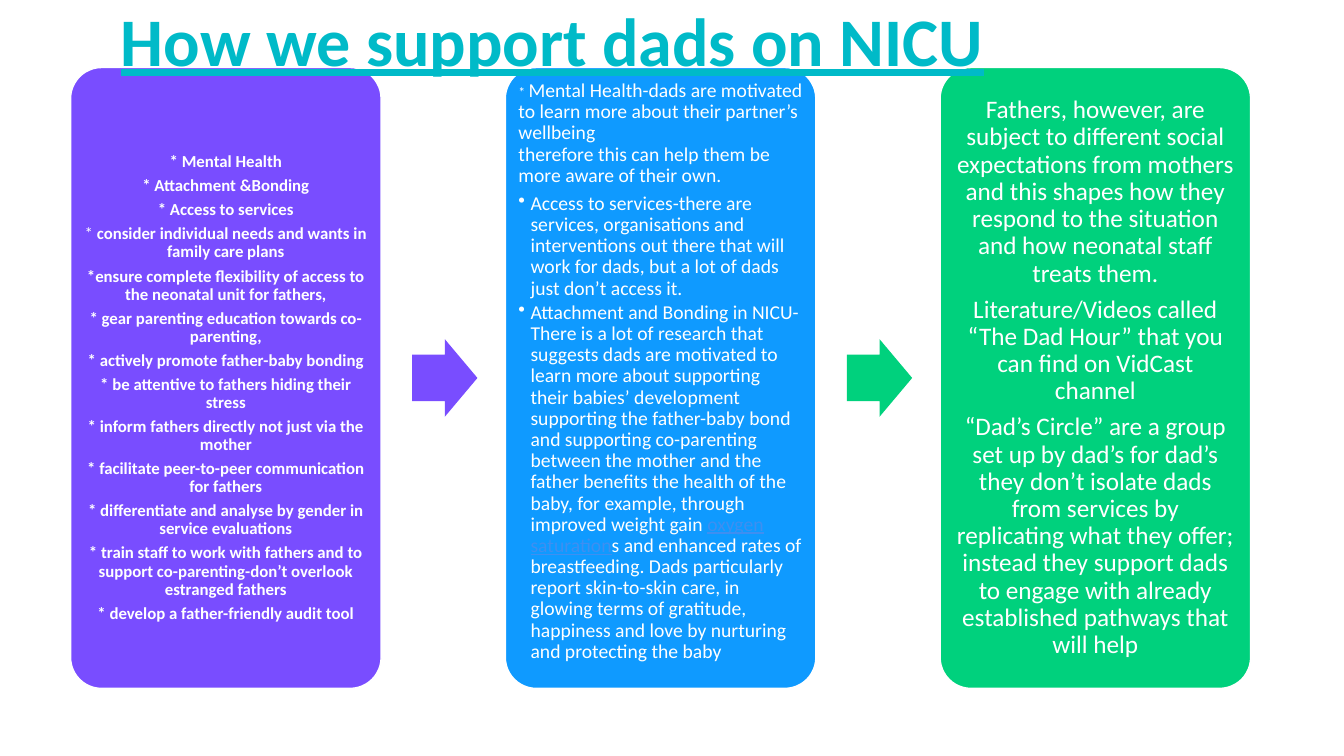
from dataclasses import dataclass

from lxml import etree
from pptx import Presentation
from pptx.dml.color import RGBColor
from pptx.enum.shapes import MSO_SHAPE
from pptx.enum.text import MSO_ANCHOR, PP_ALIGN
from pptx.oxml.ns import qn
from pptx.util import Inches, Pt

ROUNDED = MSO_SHAPE.ROUNDED_RECTANGLE
ARROW = MSO_SHAPE.RIGHT_ARROW
TOP, MIDDLE, BOTTOM = MSO_ANCHOR.TOP, MSO_ANCHOR.MIDDLE, MSO_ANCHOR.BOTTOM
LEFT, CENTER = PP_ALIGN.LEFT, PP_ALIGN.CENTER

WHITE = RGBColor(0xFF, 0xFF, 0xFF)
PURPLE = RGBColor(0x79, 0x4D, 0xFF)
BLUE = RGBColor(0x0F, 0x9A, 0xFF)
GREEN = RGBColor(0x00, 0xD1, 0x7D)
TEAL = RGBColor(0x00, 0xBA, 0xC8)
LINK = RGBColor(0x3E, 0x8F, 0xF1)

FONT = "Calibri"
COLUMN = Inches(3.08)
PITCH = 1.4
GRID_LEFT, GRID_TOP = Inches(0.7), Inches(0.67)
PANEL_ROWS = 2
ARROW_OFFSET, ARROW_WIDTH, ARROW_HEIGHT = 1.1, 0.21, 0.25
BULLET_INDENT = Inches(0.12)


@dataclass
class Span:
    text: str
    size: float | None = None
    bold: bool | None = None
    link: bool = False


@dataclass
class Item:
    spans: list[Span]
    bullet: bool = False


@dataclass
class Panel:
    color: RGBColor
    items: list[Item]
    size: float
    inset: float
    top_inset: float
    bold: bool = False
    anchor: MSO_ANCHOR = MIDDLE
    align: PP_ALIGN = CENTER


def plain(*texts: str) -> list[Item]:
    return [Item([Span(text)]) for text in texts]


SUPPORT_LIST = plain(
    "* Mental Health",
    "* Attachment &Bonding",
    "* Access to services",
) + [
    Item([Span("* ", bold=False), Span("consider individual needs and wants in family care plans")]),
] + plain(
    "*ensure complete flexibility of access to the neonatal unit for fathers,",
    "* gear parenting education towards co-parenting,",
    "* actively promote father-baby bonding",
    "* be attentive to fathers hiding their stress",
    "* inform fathers directly not just via the mother",
    "* facilitate peer-to-peer communication for fathers",
    "* differentiate and analyse by gender in service evaluations",
    "* train staff to work with fathers and to support co-parenting-don’t overlook estranged fathers",
    "* develop a father-friendly audit tool",
)

REASONS = [
    Item([
        Span("* ", size=10),
        Span("Mental Health-dads are motivated to learn more about their partner’s wellbeing\v"
             "therefore this can help them be more aware of their own."),
    ]),
    Item([Span("Access to services-there are services, organisations and interventions out there "
               "that will work for dads, but a lot of dads just don’t access it.")], bullet=True),
    Item([
        Span("Attachment and Bonding in NICU-There is a lot of research that suggests dads are "
             "motivated to learn more about supporting their babies’ development supporting the "
             "father-baby bond and supporting co-parenting between the mother and the father "
             "benefits the health of the baby, for example, through improved weight gain "),
        Span("oxygen saturation", link=True),
        Span("s and enhanced rates of breastfeeding. Dads particularly report skin-to-skin care, "
             "in glowing terms of gratitude, happiness and love by nurturing and protecting the baby"),
    ], bullet=True),
]

RESOURCES = plain(
    "Fathers, however, are subject to different social expectations from mothers and this shapes "
    "how they respond to the situation and how neonatal staff treats them.",
    "Literature/Videos called “The Dad Hour” that you can find on VidCast\vchannel",
    "“Dad’s Circle” are a group set up by dad’s for dad’s they don’t isolate dads from services by "
    "replicating what they offer; instead they support dads to engage with already established "
    "pathways that will help",
)

PANELS = [
    Panel(PURPLE, SUPPORT_LIST, 12, 0.04, 0.24, bold=True),
    Panel(BLUE, REASONS, 14, 0.04, 0.04, anchor=TOP, align=LEFT),
    Panel(GREEN, RESOURCES, 18, 0.07, 0.07),
]


def add_bullet(paragraph) -> None:
    paragraph.level = 1
    properties = paragraph._p.get_or_add_pPr()
    properties.set("marL", str(BULLET_INDENT))
    properties.set("indent", str(-BULLET_INDENT))
    etree.SubElement(properties, qn("a:buChar")).set("char", "•")


def add_span(paragraph, span: Span) -> None:
    for index, line in enumerate(span.text.split("\v")):
        if index:
            paragraph.add_line_break()
        run = paragraph.add_run()
        run.text = line
        if span.size:
            run.font.size = Pt(span.size)
        if span.bold is not None:
            run.font.bold = span.bold
        if span.link:
            run.font.color.rgb = LINK
            run.font.underline = True


def fill_text(frame, panel: Panel) -> None:
    frame.word_wrap = True
    frame.vertical_anchor = panel.anchor
    frame.margin_left = frame.margin_right = frame.margin_bottom = Inches(panel.inset)
    frame.margin_top = Inches(panel.top_inset)
    for index, item in enumerate(panel.items):
        paragraph = frame.add_paragraph() if index else frame.paragraphs[0]
        paragraph.alignment = panel.align
        paragraph.line_spacing = 0.9
        paragraph.space_after = Pt(panel.size * (0.15 if item.bullet else 0.35))
        if item.bullet:
            add_bullet(paragraph)
        paragraph.font.name = FONT
        paragraph.font.size = Pt(panel.size)
        paragraph.font.bold = panel.bold
        paragraph.font.color.rgb = WHITE
        for span in item.spans:
            add_span(paragraph, span)


def add_block(slide, kind: MSO_SHAPE, column: float, row: float,
              columns: float, rows: float, color: RGBColor):
    shape = slide.shapes.add_shape(
        kind, int(GRID_LEFT + column * COLUMN), int(GRID_TOP + row * COLUMN),
        int(columns * COLUMN), int(rows * COLUMN))
    shape.shadow.inherit = False
    shape.fill.solid()
    shape.fill.fore_color.rgb = color
    shape.line.fill.background()
    return shape


def add_panel(slide, column: float, panel: Panel) -> None:
    shape = add_block(slide, ROUNDED, column, 0, 1, PANEL_ROWS, panel.color)
    shape.adjustments[0] = 0.1
    shape.line.color.rgb = WHITE
    shape.line.width = Pt(1)
    fill_text(shape.text_frame, panel)


def add_arrow(slide, column: float, color: RGBColor) -> None:
    shape = add_block(slide, ARROW, column + ARROW_OFFSET, (PANEL_ROWS - ARROW_HEIGHT) / 2,
                      ARROW_WIDTH, ARROW_HEIGHT, color)
    shape.adjustments[0] = 0.6
    shape.adjustments[1] = 0.5


def add_title(slide, text: str) -> None:
    frame = slide.shapes.add_textbox(Inches(1.1), 0, Inches(11.32), Inches(0.85)).text_frame
    frame.word_wrap = True
    frame.vertical_anchor = BOTTOM
    paragraph = frame.paragraphs[0]
    paragraph.text = text
    paragraph.line_spacing = 0.9
    paragraph.font.name = FONT
    paragraph.font.size = Pt(48.6)
    paragraph.font.bold = True
    paragraph.font.underline = True
    paragraph.font.color.rgb = TEAL


def main() -> None:
    presentation = Presentation()
    presentation.slide_width, presentation.slide_height = Inches(13.33), Inches(7.5)
    slide = presentation.slides.add_slide(presentation.slide_layouts[6])
    for index, panel in enumerate(PANELS):
        add_panel(slide, index * PITCH, panel)
    for index, color in enumerate((PURPLE, GREEN)):
        add_arrow(slide, index * PITCH, color)
    add_title(slide, "How we support dads on NICU")
    presentation.save("out.pptx")


if __name__ == "__main__":
    main()
